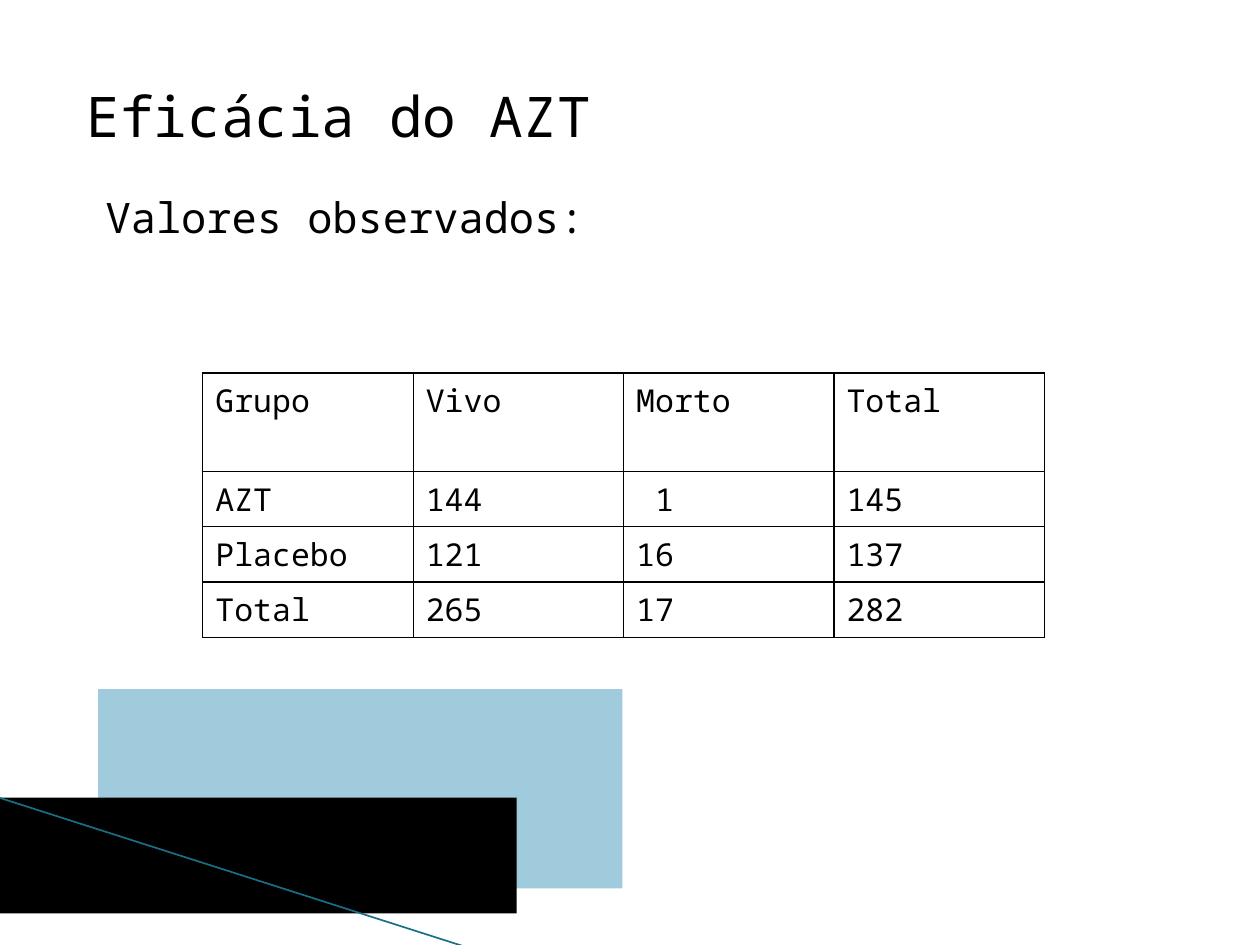
from dataclasses import dataclass

from lxml import etree
from pptx import Presentation
from pptx.dml.color import RGBColor
from pptx.enum.shapes import MSO_CONNECTOR, MSO_SHAPE
from pptx.oxml.ns import qn
from pptx.util import Inches, Pt

RECT = MSO_SHAPE.RECTANGLE
STRAIGHT = MSO_CONNECTOR.STRAIGHT


@dataclass(frozen=True)
class Theme:
    font: str = "Noto Sans Mono"
    black: str = "000000"
    pale_blue: str = "9FCBDC"
    teal: str = "196F85"
    title: int = 32
    subtitle: int = 24
    body: int = 18
    border: float = 0.75


T = Theme()

ROWS = [
    ("Grupo", "Vivo", "Morto", "Total"),
    ("AZT", "144", "1", "145"),
    ("Placebo", "121", "16", "137"),
    ("Total", "265", "17", "282"),
]
COL_WIDTH = 1.67
HEADER_HEIGHT, ROW_HEIGHT = 0.78, 0.44
CHAR_INDENT = Inches(0.15)  # one character at body size


def style(p, size):
    for r in p.runs:
        r.font.name = T.font
        r.font.size = Pt(size)
        r.font.color.rgb = RGBColor.from_string(T.black)


def add_block(s, x, y, w, h, color):
    sp = s.shapes.add_shape(RECT, Inches(x), Inches(y), Inches(w), Inches(h))
    sp.shadow.inherit = False
    sp.fill.solid()
    sp.fill.fore_color.rgb = RGBColor.from_string(color)
    sp.line.fill.background()


def add_line(s, x1, y1, x2, y2, color, width):
    sp = s.shapes.add_connector(STRAIGHT, Inches(x1), Inches(y1), Inches(x2), Inches(y2))
    sp.line.color.rgb = RGBColor.from_string(color)
    sp.line.width = Pt(width)
    etree.SubElement(sp._element.spPr, qn("a:effectLst"))


def add_heading(s):
    sp = s.shapes.add_textbox(Inches(0.59), Inches(0.6), Inches(9.13), Inches(1.33))
    tf = sp.text_frame
    tf.word_wrap = True
    tf.text = "Eficácia do AZT"
    style(tf.paragraphs[0], T.title)
    p = tf.add_paragraph()
    p.text = "Valores observados:"
    p._p.get_or_add_pPr().set("marL", str(CHAR_INDENT))
    p.space_before = Pt(24.5)
    style(p, T.subtitle)


def set_borders(cell):
    tcPr = cell._tc.get_or_add_tcPr()
    for i, side in enumerate(("lnL", "lnR", "lnT", "lnB")):
        ln = etree.Element(qn(f"a:{side}"), w=str(Pt(T.border)))
        fill = etree.SubElement(ln, qn("a:solidFill"))
        etree.SubElement(fill, qn("a:srgbClr"), val=T.black)
        tcPr.insert(i, ln)


def add_results_table(s):
    n_rows, n_cols = len(ROWS), len(ROWS[0])
    height = HEADER_HEIGHT + ROW_HEIGHT * (n_rows - 1)
    table = s.shapes.add_table(n_rows, n_cols, Inches(1.61), Inches(2.96),
                               Inches(COL_WIDTH * n_cols), Inches(height)).table
    table.first_row = table.horz_banding = False
    for col in table.columns:
        col.width = Inches(COL_WIDTH)
    for i, values in enumerate(ROWS):
        table.rows[i].height = Inches(ROW_HEIGHT if i else HEADER_HEIGHT)
        for j, value in enumerate(values):
            cell = table.cell(i, j)
            cell.text = value
            cell.fill.background()
            set_borders(cell)
            style(cell.text_frame.paragraphs[0], T.body)
    # Line the single digit up with the units below it
    table.cell(1, 2).margin_left = Inches(0.1) + CHAR_INDENT


def main():
    prs = Presentation()
    prs.slide_width, prs.slide_height = Inches(10), Inches(7.5)
    s = prs.slides.add_slide(prs.slide_layouts[6])

    # Corner decoration
    add_block(s, 0.78, 5.47, 4.16, 1.58, T.pale_blue)
    add_block(s, -0.06, 6.33, 4.16, 0.92, T.black)
    add_line(s, -0.01, 6.33, 3.71, 7.52, T.teal, 0.96)

    # Content
    add_heading(s)
    add_results_table(s)

    prs.save("out.pptx")


if __name__ == "__main__":
    main()
